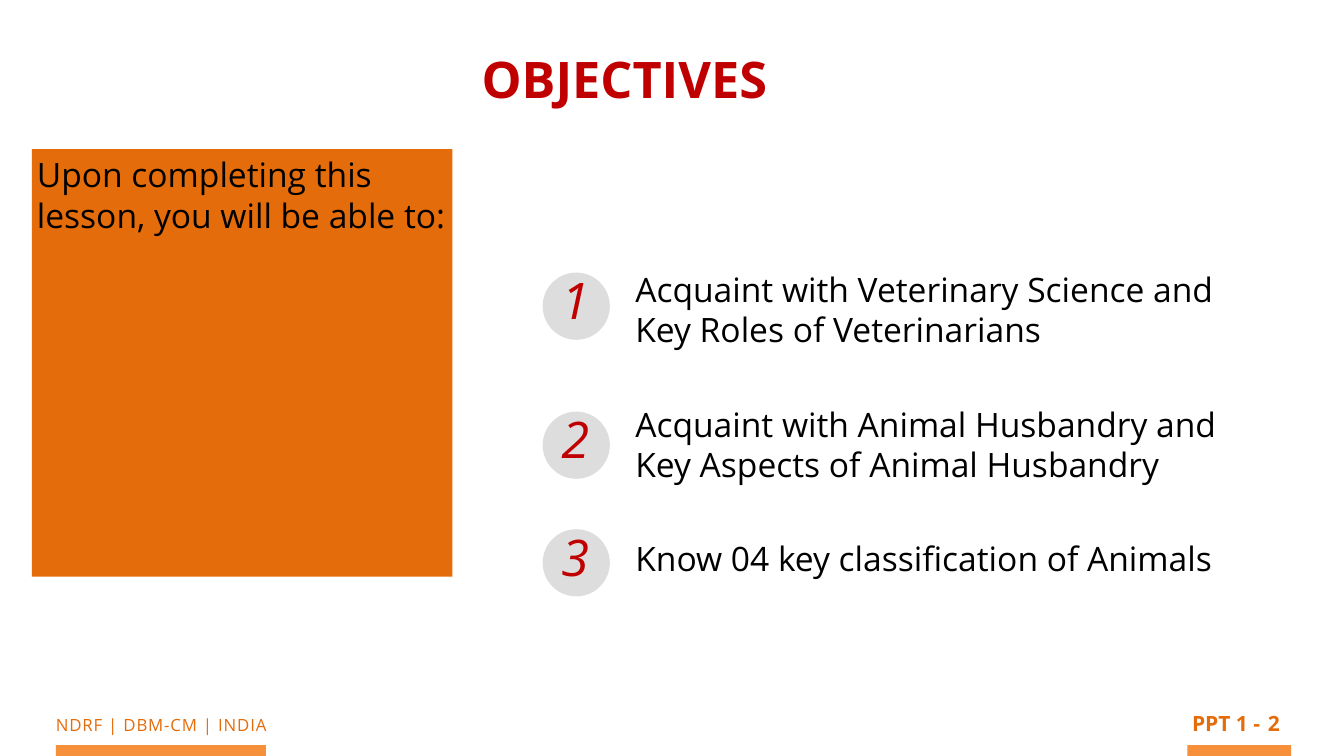
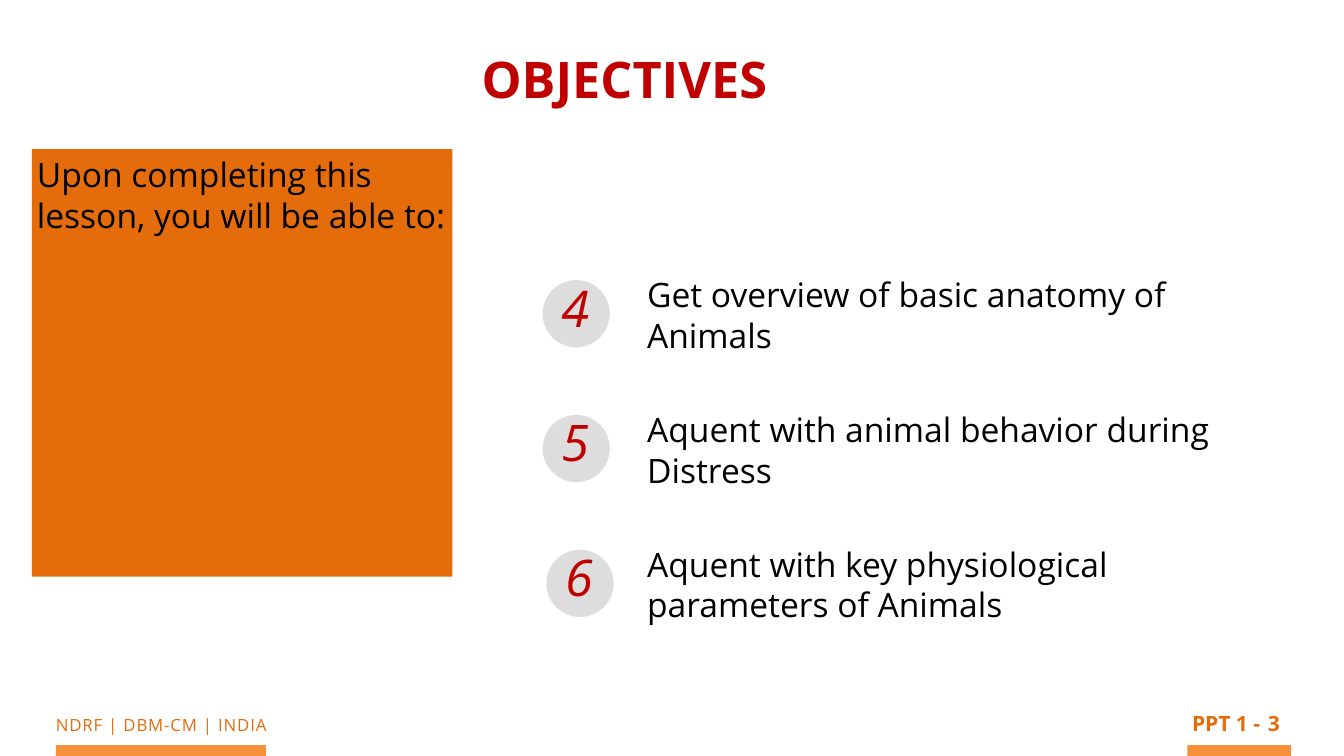
from dataclasses import dataclass

from pptx import Presentation
from pptx.dml.color import RGBColor
from pptx.enum.shapes import MSO_SHAPE
from pptx.enum.text import MSO_ANCHOR, MSO_AUTO_SIZE, PP_ALIGN
from pptx.shapes.base import BaseShape
from pptx.slide import Slide
from pptx.text.text import TextFrame
from pptx.util import Emu, Inches, Pt

# Slide grid: 32 columns by 18 rows
SLIDE_WIDTH, SLIDE_HEIGHT = Inches(26.67), Inches(15)
COLUMN, ROW = SLIDE_WIDTH / 32, SLIDE_HEIGHT / 18

FONT = "Open Sans"
ORANGE, LIGHT_ORANGE = "E46C0A", "F7903B"
RED, GREY, BLACK = "C00000", "DDDDDD", "000000"


@dataclass(frozen=True)
class Area:
    """A place on the grid, in columns and rows."""
    left: float
    top: float
    width: float
    height: float

    def emu(self) -> tuple[Emu, Emu, Emu, Emu]:
        return (Emu(round(self.left * COLUMN)), Emu(round(self.top * ROW)),
                Emu(round(self.width * COLUMN)), Emu(round(self.height * ROW)))


@dataclass(frozen=True)
class Style:
    size: float
    color: str
    bold: bool = False
    italic: bool = False
    align: PP_ALIGN = PP_ALIGN.LEFT
    tracking: float = 0


@dataclass(frozen=True)
class Objective:
    number: int
    text: str
    badge_left: float
    badge_top: float
    gap_before: float = 0


@dataclass(frozen=True)
class ObjectivesPage:
    number: int
    list_area: Area
    objectives: tuple[Objective, ...]


TITLE = Style(72, RED, bold=True)
BODY = Style(48, BLACK)
BADGE_NUMBER = Style(72, RED, italic=True)
FOOTER = Style(24, ORANGE, align=PP_ALIGN.CENTER, tracking=1.2)
PAGE_NUMBER = Style(30, ORANGE, bold=True, align=PP_ALIGN.CENTER)

BADGE_SIZE = 1.6
BADGE_LEFT = 12.92
FOOTER_BARS = (Area(1.33, 17.74, 5, 0.26), Area(28.27, 17.74, 2.47, 0.26))

PAGES = (
    ObjectivesPage(2, Area(15.02, 6.29, 15.05, 7.64), (
        Objective(1, "Acquaint with Veterinary Science and Key Roles of Veterinarians",
                  BADGE_LEFT, 6.49),
        Objective(2, "Acquaint with Animal Husbandry and Key Aspects of Animal Husbandry",
                  BADGE_LEFT, 9.8, 77.6),
        Objective(3, "Know 04 key classification of Animals", BADGE_LEFT, 12.6, 76),
    )),
    ObjectivesPage(3, Area(15.3, 6.42, 15.32, 8.64), (
        Objective(4, "Get overview of basic anatomy of Animals", BADGE_LEFT, 6.67),
        Objective(5, "Aquent with animal behavior during Distress",
                  BADGE_LEFT, 9.88, 77.6),
        Objective(6, "Aquent with key physiological parameters of Animals",
                  13.01, 13.09, 77.6),
    )),
)


def rgb(color: str) -> RGBColor:
    return RGBColor.from_string(color)


def write(frame: TextFrame, lines: list[str], style: Style, inset: float = 0.09,
          gaps: tuple[float, ...] = ()) -> None:
    """Fill a text frame with one paragraph per line."""
    frame.vertical_anchor = MSO_ANCHOR.TOP
    frame.margin_left = frame.margin_right = Inches(inset)
    frame.margin_top = frame.margin_bottom = Inches(inset)
    for index, line in enumerate(lines):
        paragraph = frame.add_paragraph() if index else frame.paragraphs[0]
        run = paragraph.add_run()
        run.text = line
        paragraph.alignment = style.align
        if index and gaps:
            paragraph.space_before = Pt(gaps[index])
        font = paragraph.font
        font.name, font.size = FONT, Pt(style.size)
        font.bold, font.italic = style.bold, style.italic
        font.color.rgb = rgb(style.color)
        if style.tracking:
            run._r.get_or_add_rPr().set("spc", str(round(style.tracking * 100)))


def add_text(slide: Slide, area: Area, lines: list[str], style: Style,
             wrap: bool = True, grow: bool = False,
             gaps: tuple[float, ...] = ()) -> None:
    frame = slide.shapes.add_textbox(*area.emu()).text_frame
    frame.word_wrap = wrap
    frame.auto_size = MSO_AUTO_SIZE.SHAPE_TO_FIT_TEXT if grow else MSO_AUTO_SIZE.NONE
    write(frame, lines, style, gaps=gaps)


def add_filled(slide: Slide, kind: MSO_SHAPE, area: Area, color: str) -> BaseShape:
    shape = slide.shapes.add_shape(kind, *area.emu())
    shape.shadow.inherit = False
    shape.fill.solid()
    shape.fill.fore_color.rgb = rgb(color)
    shape.line.fill.background()
    return shape


def add_footer(slide: Slide, page_number: int) -> None:
    add_text(slide, Area(0.79, 16.9, 6.1, 0.7), ["NDRF | DBM-CM | INDIA"], FOOTER,
             grow=True)
    add_text(slide, Area(28.27, 16.81, 1.85, 0.82), ["PPT 1 -"], PAGE_NUMBER,
             wrap=False, grow=True)
    add_text(slide, Area(30.08, 16.81, 0.5, 0.89), [str(page_number)], PAGE_NUMBER)
    for bar in FOOTER_BARS:
        add_filled(slide, MSO_SHAPE.RECTANGLE, bar, LIGHT_ORANGE)


def add_badge(slide: Slide, objective: Objective) -> None:
    left, top = objective.badge_left, objective.badge_top
    add_filled(slide, MSO_SHAPE.OVAL, Area(left, top, BADGE_SIZE, BADGE_SIZE), GREY)
    add_text(slide, Area(left + 0.34, top - 0.19, 1.08, 2.21),
             [str(objective.number)], BADGE_NUMBER)


def add_objectives_page(slide: Slide, page: ObjectivesPage) -> None:
    add_footer(slide, page.number)

    # Introduction panel and title
    panel = add_filled(slide, MSO_SHAPE.RECTANGLE, Area(0.76, 3.55, 10.01, 10.18), ORANGE)
    write(panel.text_frame, ["Upon completing this lesson, you will be able to:"],
          BODY, inset=0.1)
    add_text(slide, Area(11.36, 1.03, 7.02, 1.84), ["OBJECTIVES"], TITLE,
             wrap=False, grow=True)

    # Numbered objectives
    add_text(slide, page.list_area, [item.text for item in page.objectives], BODY,
             grow=True, gaps=tuple(item.gap_before for item in page.objectives))
    for objective in page.objectives:
        add_badge(slide, objective)


def main() -> None:
    deck = Presentation()
    deck.slide_width, deck.slide_height = SLIDE_WIDTH, SLIDE_HEIGHT
    blank = deck.slide_layouts[6]
    for page in PAGES:
        add_objectives_page(deck.slides.add_slide(blank), page)
    deck.save("out.pptx")


if __name__ == "__main__":
    main()
